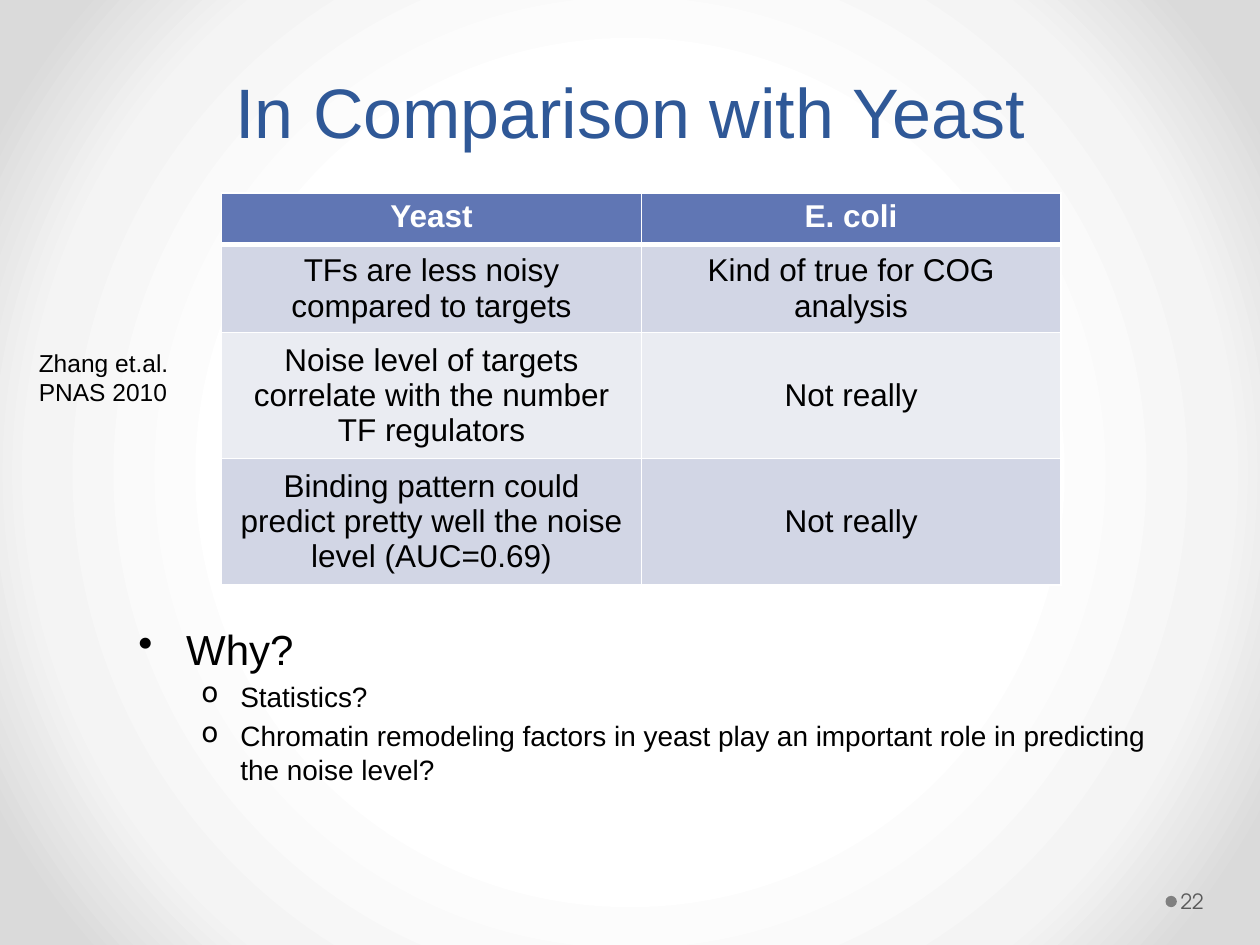
from lxml import etree
from pptx import Presentation
from pptx.dml.color import RGBColor
from pptx.enum import shapes, text
from pptx.oxml.ns import qn
from pptx.util import Inches, Pt

BLUE = RGBColor(0x2F, 0x58, 0x97)
HEAD = RGBColor(0x60, 0x76, 0xB4)
BANDS = [RGBColor(0xEA, 0xEC, 0xF2), RGBColor(0xD2, 0xD6, 0xE5)]
WHITE = RGBColor(0xFF, 0xFF, 0xFF)
BLACK = RGBColor(0, 0, 0)
DOT = RGBColor(0x80, 0x80, 0x80)
GREY = RGBColor(0x59, 0x59, 0x59)

ROWS = [
    ("Yeast", "E. coli"),
    ("TFs are less noisy compared to targets", "Kind of true for COG analysis"),
    ("Noise level of targets correlate with the number\nTF regulators",
     "Not really"),
    ("Binding pattern could predict pretty well the noise level (AUC=0.69)",
     "Not really"),
]
# Text, size, left margin, hanging indent, bullet
POINTS = [
    ("Why?", 24, 0.38, 0.38, "•"),
    ("Statistics?", 16, 0.81, 0.31, "o"),
    ("Chromatin remodeling factors in yeast play an important role in "
     "predicting the noise level?", 16, 0.81, 0.31, "o"),
]


def node(parent, tag, **attrs):
    return etree.SubElement(parent, qn(tag), **attrs)


def style(para, size, color, face="Arial", bold=False):
    font = para.font
    font.size, font.name, font.bold = Pt(size), face, bold
    font.color.rgb = color


def add_back(slide):
    """Radial gradient, white in the middle."""
    fill = slide.background.fill
    fill.gradient()
    grad = slide.background._cSld.find(".//" + qn("a:gradFill"))
    for child in list(grad):
        grad.remove(child)
    stops = node(grad, "a:gsLst")
    for pos, color in ((50, "FFFFFF"), (76, "F4F4F4"), (92, "DADADA")):
        stop = node(stops, "a:gs", pos=str(pos * 1000))
        node(stop, "a:srgbClr", val=color)
    shade = node(grad, "a:path", path="circle")
    node(shade, "a:fillToRect", **dict.fromkeys("ltrb", "50000"))


def add_title(slide, words):
    title = slide.shapes.title
    title.left, title.top = Inches(0.5), Inches(0)
    title.width, title.height = Inches(9), Inches(1.75)
    frame = title.text_frame
    frame.text = words
    frame.vertical_anchor = text.MSO_ANCHOR.MIDDLE
    para = frame.paragraphs[0]
    para.alignment = text.PP_ALIGN.CENTER
    style(para, 40, BLUE)


def add_text(slide, words, left, top, width, height, size, color,
             face="Arial", wrap=True):
    box = slide.shapes.add_textbox(
        Inches(left), Inches(top), Inches(width), Inches(height))
    frame = box.text_frame
    frame.word_wrap = wrap
    frame.text = words
    for para in frame.paragraphs:
        style(para, size, color, face)
    return frame


def add_points(slide):
    lines = "\n".join(point[0] for point in POINTS)
    frame = add_text(slide, lines, 1, 4.9, 8.5, 1.68, 16, BLACK)
    for para, (_, size, left, hang, mark) in zip(frame.paragraphs, POINTS):
        para.level = 0 if size == 24 else 1
        para.font.size = Pt(size)
        para.space_before = Pt(size * 0.2)
        props = para._p.get_or_add_pPr()
        props.set("marL", str(Inches(left)))
        props.set("indent", str(-Inches(hang)))
        bullet = etree.Element(qn("a:buChar"), char=mark)
        props.find(qn("a:defRPr")).addprevious(bullet)


def add_edges(cell, head):
    props = cell._tc.get_or_add_tcPr()
    for i, side in enumerate("LRTB"):
        wide = 3 if head and side == "B" else 1
        line = etree.Element(qn("a:ln" + side), w=str(Pt(wide)))
        node(node(line, "a:solidFill"), "a:srgbClr", val=str(WHITE))
        props.insert(i, line)


def add_grid(slide):
    grid = slide.shapes.add_table(
        len(ROWS), 2, Inches(1.76), Inches(1.53),
        Inches(6.66), Inches(0.41 * len(ROWS))).table
    for r, row in enumerate(ROWS):
        head = r == 0
        for c, words in enumerate(row):
            cell = grid.cell(r, c)
            cell.text = words
            cell.fill.solid()
            cell.fill.fore_color.rgb = HEAD if head else BANDS[r % 2]
            if not head:
                cell.vertical_anchor = text.MSO_ANCHOR.MIDDLE
            for para in cell.text_frame.paragraphs:
                para.alignment = text.PP_ALIGN.CENTER
                style(para, 18, WHITE if head else BLACK, bold=head)
            add_edges(cell, head)


def add_number(slide, words):
    dot = slide.shapes.add_shape(
        shapes.MSO_SHAPE.OVAL, Inches(9.25), Inches(7.11),
        Inches(0.09), Inches(0.09))
    dot.shadow.inherit = False
    dot.fill.solid()
    dot.fill.fore_color.rgb = DOT
    dot.line.fill.background()
    frame = add_text(slide, words, 9.34, 6.95, 0.61, 0.4, 12, GREY,
                     "TeX Gyre Adventor")
    frame.margin_left, frame.margin_right = Inches(0.03), Inches(0.05)
    frame.vertical_anchor = text.MSO_ANCHOR.MIDDLE


def main():
    deck = Presentation()
    deck.slide_width, deck.slide_height = Inches(10), Inches(7.5)
    slide = deck.slides.add_slide(deck.slide_layouts[5])
    add_back(slide)
    add_title(slide, "In Comparison with Yeast")
    add_points(slide)
    add_number(slide, "22")
    add_grid(slide)
    # Source of the yeast findings
    add_text(slide, "Zhang et.al.\nPNAS 2010", 0.21, 2.71, 1.24, 0.57,
             14, BLACK, wrap=False)
    deck.save("out.pptx")


if __name__ == "__main__":
    main()
